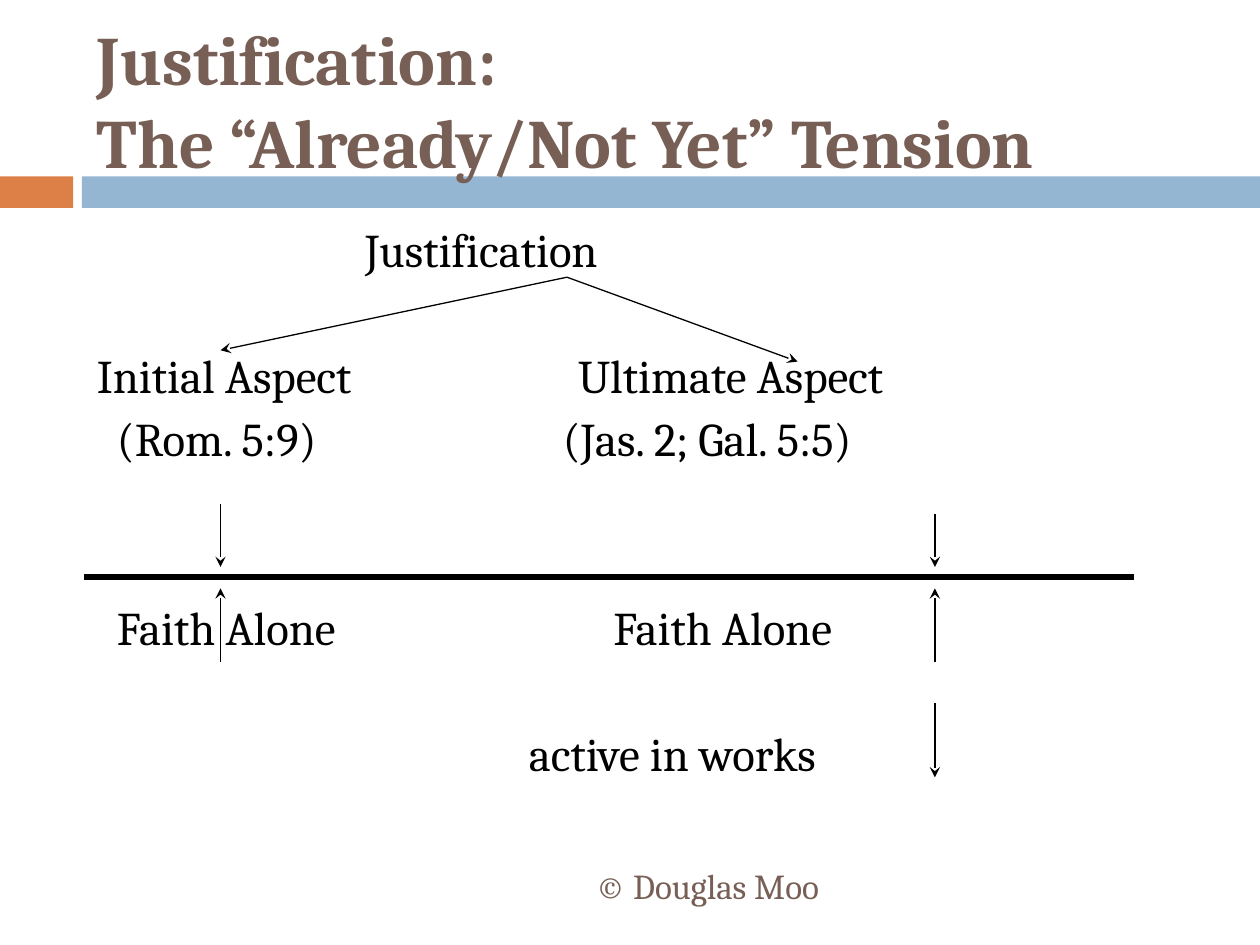
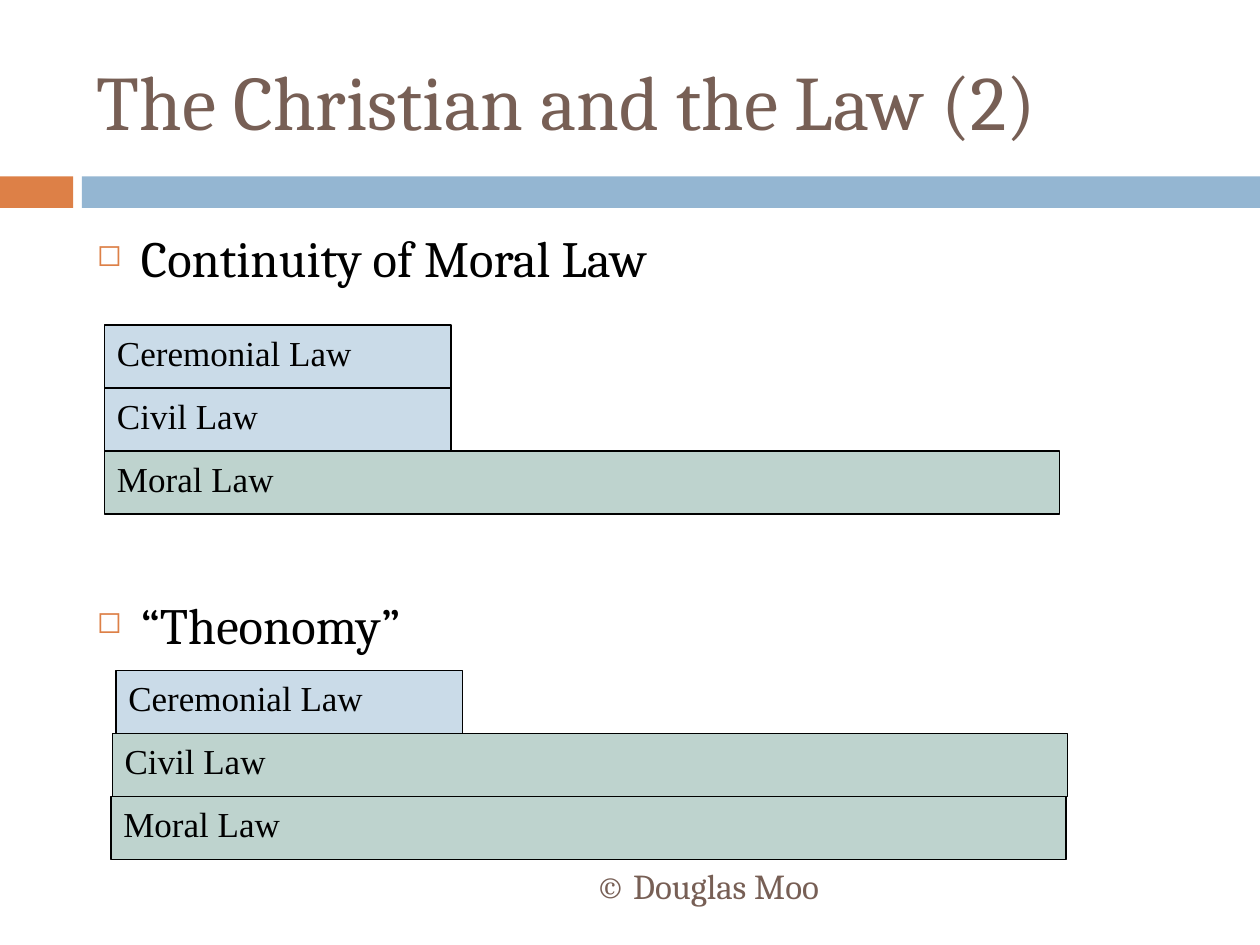
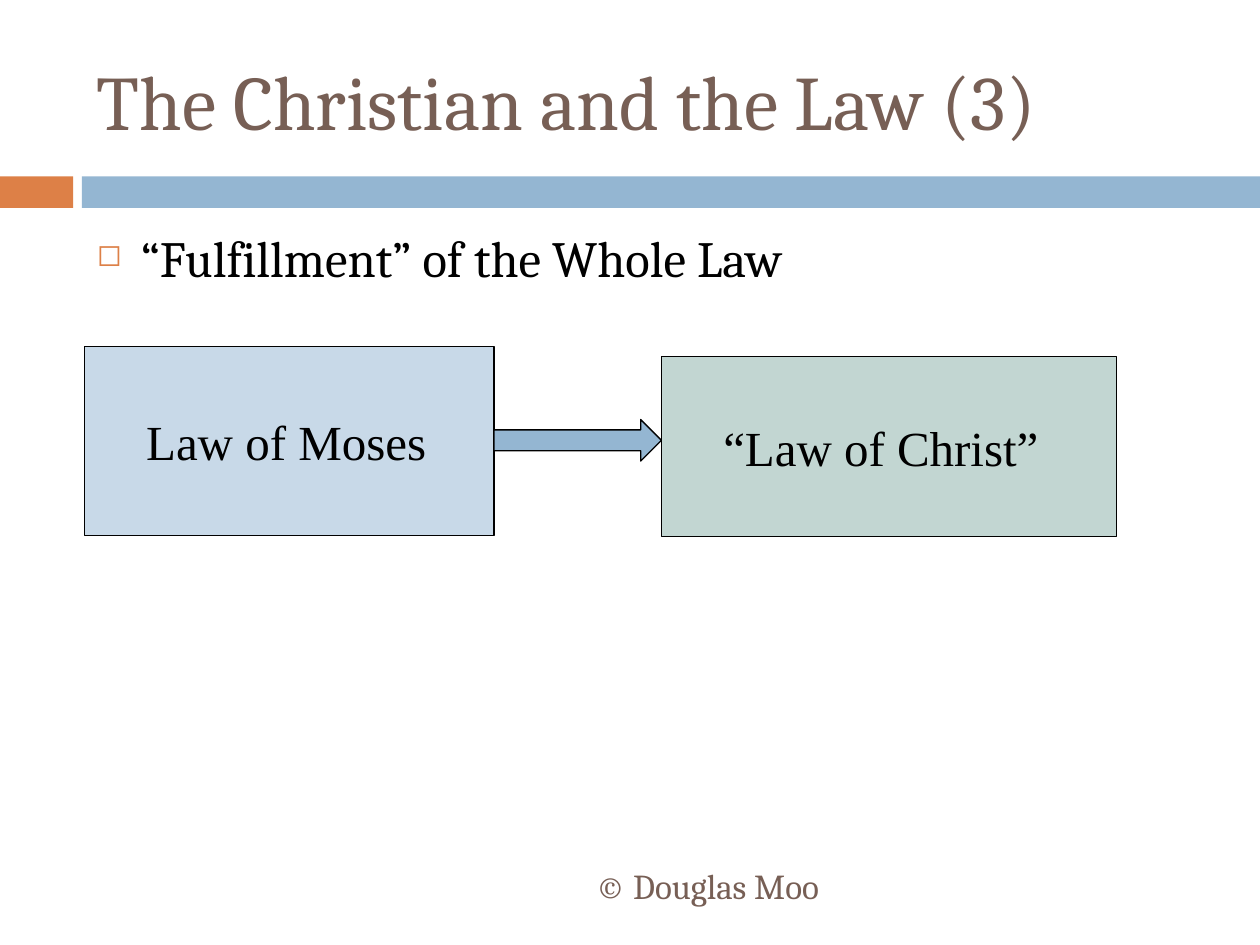
from collections import namedtuple
from dataclasses import dataclass

from lxml.etree import SubElement
from pptx import Presentation
from pptx.dml.color import RGBColor as RGB
from pptx.enum.shapes import MSO_CONNECTOR as Connector, MSO_SHAPE as Shape
from pptx.enum.text import MSO_ANCHOR as Anchor, PP_ALIGN as Align
from pptx.oxml.ns import qn
from pptx.util import Inches, Pt


@dataclass(frozen=True)
class Theme:
    ink: str = "000000"
    brown: str = "775F55"
    orange: str = "DD8047"
    blue: str = "94B6D2"
    green: str = "7BA79D"
    serif: str = "Cambria"
    roman: str = "Times New Roman"
    title: float = 44
    long_title: float = 39.6
    bullet: float = 29
    label: float = 26.8
    law: float = 28
    small: float = 20
    thin: float = 0.75
    thick: float = 3


THEME = Theme()
Box = namedtuple("Box", "left top width height")
TITLE = Box(0.67, 0.25, 8.92, 1.08)
BODY = Box(0.67, 1.75, 8.92, 4.92)
FOOTER = Box(0.67, 6.83, 5.93, 0.4)
BAND_TOP, BAND_HEIGHT = 1.4, 0.25


def inches(*lengths):
    return [Inches(round(length, 2)) for length in lengths]


def write(frame, *lines, size, font=THEME.serif, color=THEME.ink, bold=False,
          align=Align.LEFT, anchor=Anchor.TOP, inset=0.1, leading=None, gap=0):
    """Fill a text frame with one paragraph per line."""
    frame.word_wrap = True
    frame.vertical_anchor = anchor
    frame.margin_left, frame.margin_right = inches(inset, 0.1)
    frame.margin_top = frame.margin_bottom = Inches(0.05)
    frame.text = "\n".join(lines)
    for number, paragraph in enumerate(frame.paragraphs):
        paragraph.alignment = align
        if leading:
            paragraph.line_spacing = leading
        if number and gap:
            paragraph.space_before = Pt(gap)
        for run in paragraph.runs:
            run.font.size, run.font.name, run.font.bold = Pt(size), font, bold
            run.font.color.rgb = RGB.from_string(color)


def add_text(slide, box, *lines, **style):
    frame = slide.shapes.add_textbox(*inches(*box)).text_frame
    write(frame, *lines, **style)
    return frame


def add_block(slide, box, fill, kind=Shape.RECTANGLE, outlined=True, alpha=None):
    block = slide.shapes.add_shape(kind, *inches(*box))
    block.shadow.inherit = False
    block.fill.solid()
    block.fill.fore_color.rgb = RGB.from_string(fill)
    if alpha:
        tint = block.fill._xPr.find(".//" + qn("a:srgbClr"))
        SubElement(tint, qn("a:alpha"), val=str(alpha * 1000))
    if outlined:
        block.line.color.rgb = RGB.from_string(THEME.ink)
        block.line.width = Pt(THEME.thin)
    else:
        block.line.fill.background()
    return block


def add_line(slide, start, end, width=THEME.thin, arrow=True):
    line = slide.shapes.add_connector(Connector.STRAIGHT, *inches(*start, *end))
    line.line.color.rgb = RGB.from_string(THEME.ink)
    line.line.width = Pt(width)
    if arrow:
        SubElement(line.line._get_or_add_ln(), qn("a:tailEnd"), type="stealth")
    SubElement(line._element.spPr, qn("a:effectLst"))


def add_bullets(slide, box, *points, gap=0):
    frame = add_text(slide, box, *points, size=THEME.bullet, gap=gap)
    for paragraph in frame.paragraphs:
        props = paragraph._p.get_or_add_pPr()
        props.set("marL", str(Inches(0.35)))
        props.set("indent", str(Inches(-0.35)))
        SubElement(SubElement(props, qn("a:buClr")), qn("a:srgbClr"), val=THEME.orange)
        SubElement(props, qn("a:buSzPct"), val="60000")
        SubElement(props, qn("a:buChar"), char="◻")


def start_slide(deck, title, size=THEME.title, bold=False):
    """Blank slide with the bands, title and footer that all slides share."""
    slide = deck.slides.add_slide(deck.slide_layouts[6])
    for left, width, color in ((0, 0.58, THEME.orange), (0.65, 9.35, THEME.blue)):
        add_block(slide, Box(left, BAND_TOP, width, BAND_HEIGHT), color, outlined=False)
    add_text(slide, TITLE, title, size=size, color=THEME.brown, bold=bold,
             anchor=Anchor.MIDDLE)
    add_text(slide, FOOTER, "© Douglas Moo", size=THEME.small, color=THEME.brown,
             align=Align.RIGHT, anchor=Anchor.MIDDLE)
    return slide


def tension_diagram(slide, box):
    def at(x, y):
        return box.left + x, box.top + y

    # Labels: indent, row, wording
    row_height = 0.5
    for indent, row, label in (
        (2.13, 0, "Justification"),
        (0, 2, "Initial Aspect"), (3.82, 2, "Ultimate Aspect"),
        (0.16, 3, "(Rom. 5:9)"), (3.7, 3, "(Jas. 2; Gal. 5:5)"),
        (0.16, 6, "Faith Alone"), (4.1, 6, "Faith Alone"),
        (3.43, 8, "active in works"),
    ):
        add_text(slide, Box(*at(indent, row * row_height), 3.5, row_height), label,
                 size=THEME.label, leading=0.9)

    # Dividing line
    add_line(slide, at(0, 2.83), at(8.33, 2.83), THEME.thick, arrow=False)

    # Vertical arrows: x, from, to
    initial, ultimate = 1.08, 6.75
    for x, start, end in ((initial, 2.25, 2.75), (initial, 3.5, 2.92),
                          (ultimate, 2.33, 2.75), (ultimate, 3.5, 2.92),
                          (ultimate, 3.83, 4.42)):
        add_line(slide, at(x, start), at(x, end))

    # Branches to the two aspects
    for aspect in ((initial, 1.03), (5.66, 1.12)):
        add_line(slide, at(3.83, 0.45), at(*aspect))


def law_bars(slide, left, top, *bars):
    """Stack of bars; the laws that continue are long and green."""
    height = 0.5
    for row, (law, continues, shift) in enumerate(bars):
        width, color = (7.58, THEME.green) if continues else (2.75, THEME.blue)
        bar = add_block(slide, Box(left + shift, top + row * height, width, height),
                        color, alpha=49)
        write(bar.text_frame, law, size=THEME.small, font=THEME.roman)


def fulfillment(slide, box):
    # The two laws
    moses = Box(box.left, box.top + 1, 3.25, 1.5)
    christ = Box(box.left + 4.58, box.top + 1.08, 3.61, 1.43)
    for law_box, law, color, alpha in ((moses, "Law of Moses", THEME.blue, 51),
                                       (christ, "“Law of Christ”", THEME.green, 46)):
        block = add_block(slide, law_box, color, alpha=alpha)
        write(block.text_frame, law, size=THEME.law, font=THEME.roman,
              anchor=Anchor.MIDDLE, inset=0.49)

    # Arrow across the gap
    moses_right = moses.left + moses.width
    add_block(slide, Box(moses_right, box.top + 1.58, christ.left - moses_right, 0.33),
              THEME.blue, kind=Shape.RIGHT_ARROW)


def main():
    deck = Presentation()
    deck.slide_width, deck.slide_height = inches(10, 7.5)

    slide = start_slide(deck, "Justification:\vThe “Already/Not Yet” Tension",
                        size=THEME.long_title, bold=True)
    tension_diagram(slide, BODY)

    slide = start_slide(deck, "The Christian and the Law (2)")
    add_bullets(slide, BODY, "Continuity of Moral Law", "“Theonomy”", gap=175)
    law_bars(slide, 0.83, 2.58, ("Ceremonial Law", False, 0), ("Civil Law", False, 0),
             ("Moral Law", True, 0))
    law_bars(slide, 0.88, 5.32, ("Ceremonial Law", False, 0.04), ("Civil Law", True, 0.01),
             ("Moral Law", True, 0))

    slide = start_slide(deck, "The Christian and the Law (3)")
    add_bullets(slide, BODY, "“Fulfillment” of the Whole Law")
    fulfillment(slide, BODY)

    deck.save("out.pptx")


if __name__ == "__main__":
    main()
